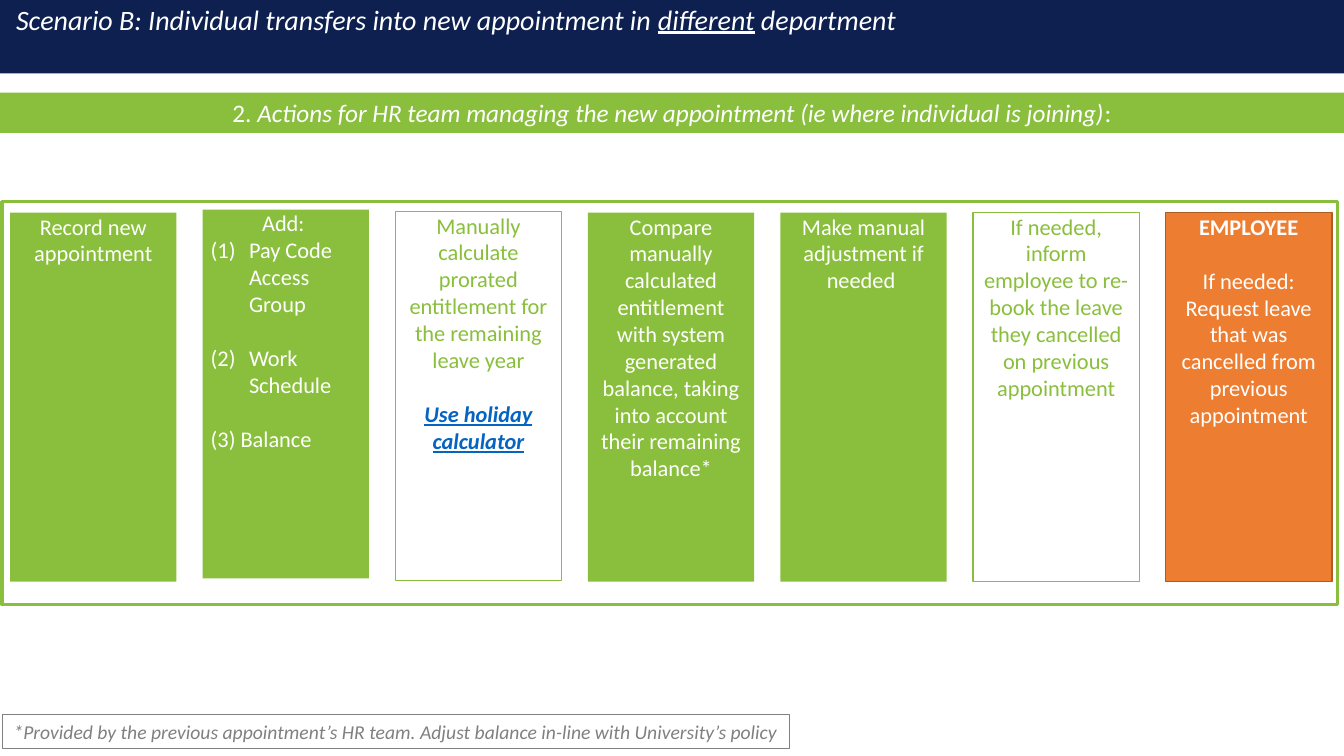
from dataclasses import dataclass

from lxml.etree import SubElement
from pptx import Presentation
from pptx.dml.color import RGBColor
from pptx.enum.shapes import MSO_SHAPE
from pptx.enum.text import MSO_ANCHOR, MSO_AUTO_SIZE, PP_ALIGN
from pptx.oxml.ns import qn
from pptx.shapes.autoshape import Shape
from pptx.slide import Slide
from pptx.util import Inches, Pt

GREEN = RGBColor(0x89, 0xBF, 0x3C)
NAVY = RGBColor(0x0E, 0x20, 0x50)
ORANGE = RGBColor(0xED, 0x7D, 0x31)
RUST = RGBColor(0xAF, 0x5C, 0x24)
BLUE = RGBColor(0x05, 0x63, 0xC1)
GREY = RGBColor(0x80, 0x80, 0x80)
WHITE = RGBColor(0xFF, 0xFF, 0xFF)

FONT = "Calibri"
WIDE = 13.33
LEFT, STEP = 0.1, 1.91
CARD_W, CARD_H = 1.65, 3.66
GAP = 19.5  # one line of card text, in points


@dataclass
class Run:
    text: str
    bold: bool = False
    italic: bool = False
    under: bool = False
    color: RGBColor | None = None


@dataclass
class Para:
    runs: list[Run]
    align: PP_ALIGN = PP_ALIGN.CENTER
    gap: float = 0
    number: bool = False


@dataclass
class Card:
    paras: list[Para]
    fill: RGBColor | None = GREEN
    line: RGBColor | None = None
    ink: RGBColor = WHITE
    top: float = 2.11


def plain(text: str, **kind) -> Para:
    return Para([Run(text)], **kind)


CARDS = [
    Card([plain("Record new appointment")]),
    Card([
        plain("Add: "),
        plain("Pay Code Access Group", align=PP_ALIGN.LEFT, number=True),
        plain("Work Schedule", align=PP_ALIGN.LEFT, gap=GAP, number=True),
        plain("(3) Balance", align=PP_ALIGN.LEFT, gap=GAP),
    ], top=2.08),
    Card([
        plain("Manually calculate prorated entitlement for the remaining leave year"),
        Para([Run("Use holiday calculator", True, True, True, BLUE)], gap=GAP),
    ], None, GREEN, GREEN, 2.1),
    Card([plain("Compare manually calculated entitlement with system generated "
                "balance, taking into account their remaining balance*")]),
    Card([plain("Make manual adjustment if needed ")]),
    Card([plain("If needed, inform employee to re-book the leave they cancelled "
                "on previous appointment")], None, GREEN, GREEN),
    Card([
        Para([Run("EMPLOYEE", bold=True)]),
        plain("If needed: Request leave that was cancelled from previous "
              "appointment", gap=GAP),
    ], ORANGE, RUST),
]


def box(slide: Slide, x: float, y: float, w: float, h: float,
        fill: RGBColor | None = None, line: RGBColor | None = None,
        weight: float = 1) -> Shape:
    """Draw a flat rectangle."""
    shape = slide.shapes.add_shape(
        MSO_SHAPE.RECTANGLE, Inches(x), Inches(y), Inches(w), Inches(h))
    shape.shadow.inherit = False
    if fill is None:
        shape.fill.background()
    else:
        shape.fill.solid()
        shape.fill.fore_color.rgb = fill
    if line is None:
        shape.line.fill.background()
    else:
        shape.line.color.rgb = line
        shape.line.width = Pt(weight)
    return shape


def write(shape: Shape, text: list[Para], *, size: float, color: RGBColor,
          inset: tuple[float, float] = (0.1, 0.05), right: float | None = None,
          wrap: bool = True, grow: bool = False) -> None:
    """Fill a shape with formatted paragraphs, from the top down."""
    frame = shape.text_frame
    frame.word_wrap = wrap
    frame.vertical_anchor = MSO_ANCHOR.TOP
    if grow:
        frame.auto_size = MSO_AUTO_SIZE.SHAPE_TO_FIT_TEXT
    side, edge = inset
    frame.margin_left = Inches(side)
    frame.margin_right = Inches(side if right is None else right)
    frame.margin_top = frame.margin_bottom = Inches(edge)
    for i, item in enumerate(text):
        para = frame.paragraphs[0] if i == 0 else frame.add_paragraph()
        para.alignment = item.align
        para.space_before = Pt(item.gap)
        if item.number:
            props = para._p.get_or_add_pPr()
            props.set("marL", str(Inches(0.38)))
            props.set("indent", str(Inches(-0.38)))
            SubElement(props, qn("a:buFont"), typeface="+mj-lt")
            SubElement(props, qn("a:buAutoNum"), type="arabicParenBoth")
        for part in item.runs:
            run = para.add_run()
            run.text = part.text
            font = run.font
            font.name, font.size = FONT, Pt(size)
            font.bold, font.italic = part.bold, part.italic
            font.underline = part.under
            font.color.rgb = part.color or color


def main() -> None:
    deck = Presentation()
    deck.slide_width, deck.slide_height = Inches(WIDE), Inches(7.5)
    slide = deck.slides.add_slide(deck.slide_layouts[6])

    # Title bar
    title = Para([
        Run("Scenario B: Individual transfers into new appointment in ", italic=True),
        Run("different", italic=True, under=True),
        Run(" department", italic=True),
    ], PP_ALIGN.LEFT)
    write(box(slide, 0, 0, WIDE, 0.73, NAVY), [title], size=20, color=WHITE,
          inset=(0.16, 0.02), right=0)

    # Section band
    head = Para([
        Run("2. "),
        Run("Actions for HR team managing the new appointment "
            "(ie where individual is joining)", italic=True),
        Run(":"),
    ])
    write(box(slide, 0, 0.92, WIDE, 0.4, GREEN), [head], size=18, color=WHITE,
          grow=True)

    # Frame and step cards
    box(slide, 0.02, 2, 13.25, 4, line=GREEN, weight=2.25)
    for i, card in enumerate(CARDS):
        shape = box(slide, LEFT + i * STEP, card.top, CARD_W, CARD_H,
                    card.fill, card.line)
        write(shape, card.paras, size=16, color=card.ink, inset=(0.08, 0))

    # Footnote
    note = Para([Run("*Provided by the previous appointment’s HR team. Adjust "
                     "balance in-line with University’s policy", italic=True)])
    write(box(slide, 0.02, 7.09, 7.81, 0.34, line=GREY, weight=0.75), [note],
          size=14, color=GREY, wrap=False, grow=True)

    deck.save("out.pptx")


if __name__ == "__main__":
    main()
